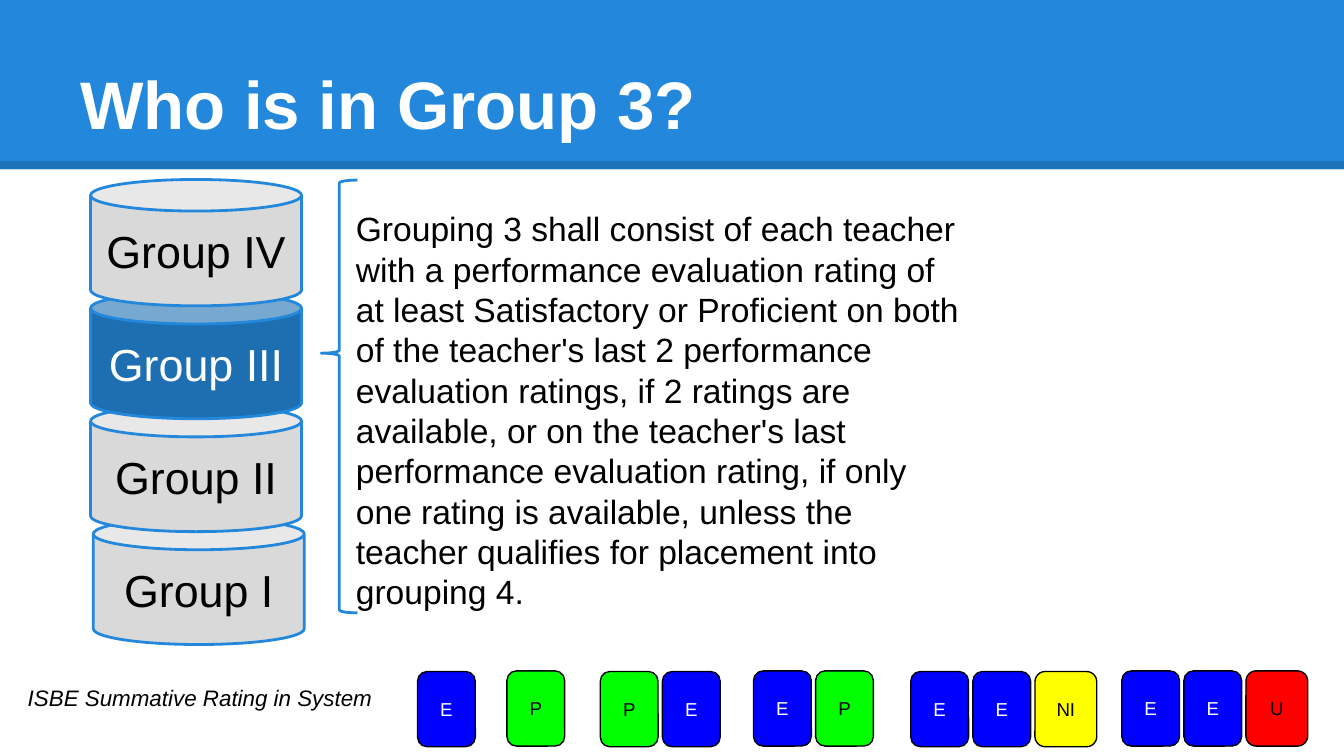
from dataclasses import dataclass

from lxml.etree import SubElement
from pptx import Presentation
from pptx.dml.color import RGBColor
from pptx.enum.shapes import MSO_CONNECTOR, MSO_SHAPE
from pptx.enum.text import MSO_ANCHOR, PP_ALIGN
from pptx.oxml.ns import qn
from pptx.util import Inches, Pt

COLUMNS, ROWS = 100, 56.25
CELL = Inches(10) / COLUMNS
FONT = "Arial"
COLORS = {
    "banner": "2388DB",
    "highlight": "1D6FB2",
    "muted": "D9D9D9",
    "black": "000000",
    "white": "FFFFFF",
    "blue": "0000FF",
    "green": "00FF00",
    "yellow": "FFFF00",
    "red": "FF0000",
}
RATINGS = {
    "E": ("blue", "white", 4.3),
    "P": ("green", "black", 4.3),
    "NI": ("yellow", "black", 4.6),
    "U": ("red", "black", 4.6),
}
RATING_SETS = [
    (0, 0.05, ["E"]),
    (6.65, 0, ["P"]),
    (13.6, 0.05, ["P", "E"]),
    (25, 0, ["E", "P"]),
    (36.7, 0.05, ["E", "E", "NI"]),
    (52.4, 0, ["E", "E", "U"]),
]
GROUPS = [
    ("Group IV", "muted", "black", None, 0),
    ("Group III", "highlight", "white", None, 0),
    ("Group II", "muted", "black", None, 0),
    ("Group I", "black", "black", 15, 0.2),
]
GROUPING_RULE = (
    "Grouping 3 shall consist of each teacher with a performance evaluation "
    "rating of at least Satisfactory or Proficient on both of the teacher's "
    "last 2 performance evaluation ratings, if 2 ratings are available, or on "
    "the teacher's last performance evaluation rating, if only one rating is "
    "available, unless the teacher qualifies for placement into grouping 4."
)


@dataclass
class Box:
    left: float
    top: float
    width: float
    height: float

    def inner(self, left, top, width, height):
        return Box(self.left + left, self.top + top, width, height)

    def emu(self):
        return [round(v * CELL) for v in (self.left, self.top, self.width, self.height)]


def rgb(name):
    return RGBColor.from_string(COLORS[name])


def set_opacity(properties, percent):
    color = next(properties.iter(qn("a:srgbClr")))
    SubElement(color, qn("a:alpha"), val=str(percent * 1000))


def write(shape, text, size, color, align=PP_ALIGN.CENTER, anchor=MSO_ANCHOR.MIDDLE,
          bold=False, italic=False):
    frame = shape.text_frame
    frame.word_wrap = True
    frame.vertical_anchor = anchor
    frame.margin_left = frame.margin_right = Inches(0.1)
    frame.margin_top = frame.margin_bottom = Inches(0.1)
    paragraph = frame.paragraphs[0]
    paragraph.alignment = align
    run = paragraph.add_run()
    run.text = text
    run.font.name = FONT
    run.font.size = Pt(size)
    run.font.bold = bold
    run.font.italic = italic
    run.font.color.rgb = rgb(color)


def add_text(slide, box, *args, **options):
    write(slide.shapes.add_textbox(*box.emu()), *args, **options)


def add_figure(slide, kind, box, fill=None, line=None, line_width=1.5):
    shape = slide.shapes.add_shape(kind, *box.emu())
    shape.shadow.inherit = False
    if fill:
        shape.fill.solid()
        shape.fill.fore_color.rgb = rgb(fill)
    else:
        shape.fill.background()
    if line:
        shape.line.color.rgb = rgb(line)
        shape.line.width = Pt(line_width)
    else:
        shape.line.fill.background()
    return shape


def add_banner(slide, box):
    add_figure(slide, MSO_SHAPE.RECTANGLE, box, "banner")
    left, top, width, _ = box.inner(0, box.height - 0.3, box.width, 0).emu()
    rule = slide.shapes.add_connector(MSO_CONNECTOR.STRAIGHT, left, top, left + width, top)
    rule.line.color.rgb = rgb("black")
    rule.line.width = Pt(4.5)
    properties = rule._element.spPr
    set_opacity(properties, 15)
    SubElement(properties, qn("a:effectLst"))
    add_text(slide, box.inner(5, 2.25, box.width - 10, 9.4), "Who is in Group 3?", 36,
             "white", PP_ALIGN.LEFT, MSO_ANCHOR.BOTTOM, bold=True)


def add_group_stack(slide, box):
    can_height = 9.4
    step = (box.height - can_height) / (len(GROUPS) - 1)
    for row, (label, fill, color, opacity, shift) in reversed(list(enumerate(GROUPS))):
        can_box = box.inner(shift, row * step, box.width, can_height)
        can = add_figure(slide, MSO_SHAPE.CAN, can_box, fill, "banner")
        if opacity:
            set_opacity(can._element.spPr, opacity)
        write(can, label, 24, color)


def add_explanation(slide, box):
    add_text(slide, box.inner(1.6, -0.9, 47.3, 34), GROUPING_RULE, 18, "black",
             PP_ALIGN.LEFT, MSO_ANCHOR.BOTTOM)
    brace = add_figure(slide, MSO_SHAPE.LEFT_BRACE, box.inner(0, 0, 2.7, box.height),
                       line="banner")
    brace.adjustments[0] = 0.08
    brace.adjustments[1] = 0.4


def add_rating_row(slide, box):
    gap = 0.32
    for left, top, ratings in RATING_SETS:
        for rating in ratings:
            fill, color, width = RATINGS[rating]
            tile_box = box.inner(left, top, width, box.height)
            tile = add_figure(slide, MSO_SHAPE.ROUNDED_RECTANGLE, tile_box, fill, "black", 0.75)
            write(tile, rating, 10, color)
            left += width + gap


def main():
    presentation = Presentation()
    presentation.slide_width = round(COLUMNS * CELL)
    presentation.slide_height = round(ROWS * CELL)
    slide = presentation.slides.add_slide(presentation.slide_layouts[6])
    add_banner(slide, Box(0, 0, COLUMNS, 12.6))
    add_group_stack(slide, Box(6.74, 13.36, 15.7, 34.6))
    add_explanation(slide, Box(23.9, 13.4, 48.9, 32.2))
    add_text(slide, Box(0.5, 49.4, 28.2, 5), "ISBE Summative Rating in System", 12, "black",
             PP_ALIGN.RIGHT, italic=True)
    add_rating_row(slide, Box(31.07, 49.92, 66.4, 5.6))
    presentation.save("out.pptx")


if __name__ == "__main__":
    main()
